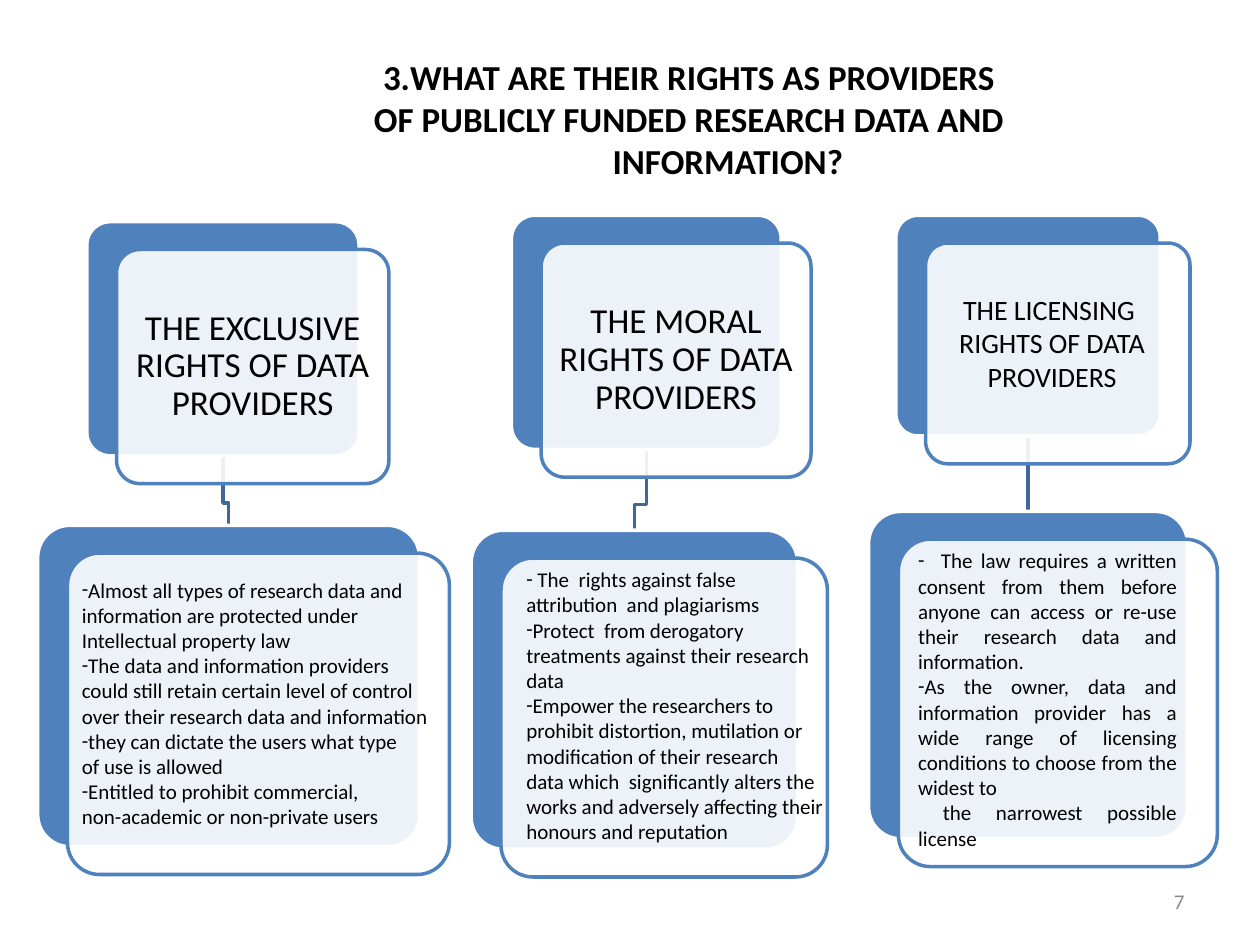
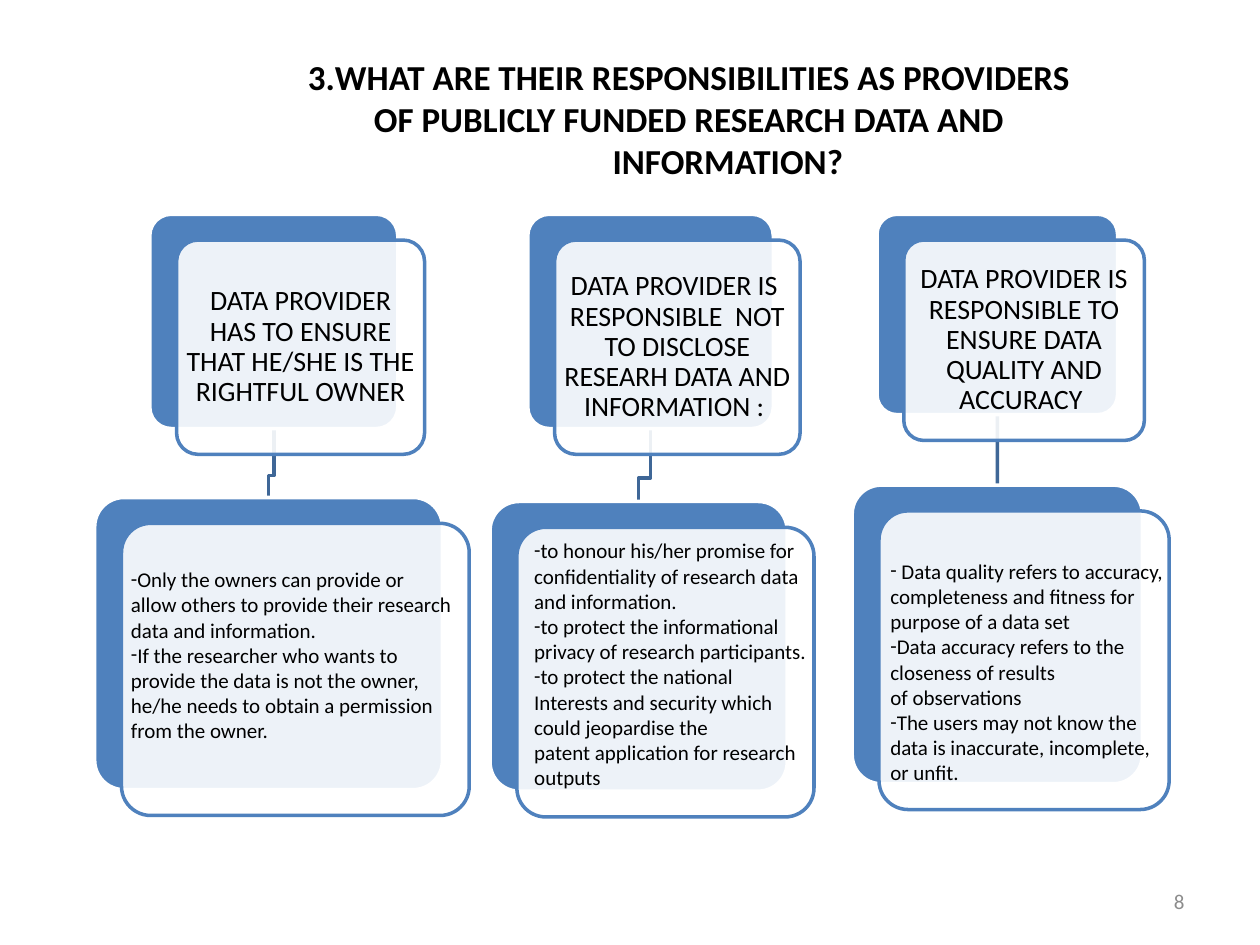
from dataclasses import dataclass

from lxml import etree
from pptx import Presentation
from pptx.dml.color import RGBColor
from pptx.enum.shapes import MSO_CONNECTOR, MSO_SHAPE
from pptx.enum.text import MSO_ANCHOR, MSO_AUTO_SIZE, PP_ALIGN
from pptx.oxml.ns import qn
from pptx.util import Cm, Pt

STRAIGHT = MSO_CONNECTOR.STRAIGHT
ROUNDED = MSO_SHAPE.ROUNDED_RECTANGLE
TOP, MIDDLE = MSO_ANCHOR.TOP, MSO_ANCHOR.MIDDLE
FIXED, GROW = MSO_AUTO_SIZE.NONE, MSO_AUTO_SIZE.SHAPE_TO_FIT_TEXT
CENTER, RIGHT, JUSTIFY = PP_ALIGN.CENTER, PP_ALIGN.RIGHT, PP_ALIGN.JUSTIFY

FONT = "Calibri"
BLUE, LINK, WHITE, BLACK, GREY = "4F81BD", "3F6797", "FFFFFF", "000000", "8C8C8C"
LINE_WIDTH = Pt(2)
BEND = 0.68
TITLE_END = ("OF PUBLICLY FUNDED RESEARCH DATA AND ", "INFORMATION?")


@dataclass(frozen=True)
class Box:
    x: float
    y: float
    w: float
    h: float

    @property
    def place(self) -> tuple:
        return Cm(self.x), Cm(self.y), Cm(self.w), Cm(self.h)

    @property
    def center_x(self) -> float:
        return self.x + self.w / 2

    def shifted(self, dx: float, dy: float) -> "Box":
        return Box(self.x + dx, self.y + dy, self.w, self.h)


@dataclass(frozen=True)
class Note:
    box: Box
    lines: tuple
    size: int = 12
    align: PP_ALIGN = JUSTIFY
    wrap: bool = False


@dataclass(frozen=True)
class Column:
    head: Box
    body: Box
    heading: str
    notes: tuple


@dataclass(frozen=True)
class Page:
    number: str
    title: str
    heading_size: int
    offset: tuple
    columns: tuple


PAGES = (
    Page("7", "WHAT ARE THEIR RIGHTS AS PROVIDERS ", 20, (0.6, 0.56), (
        Column(Box(1.75, 4.47, 5.49, 4.72), Box(0.76, 10.59, 7.7, 6.48),
               "THE EXCLUSIVE RIGHTS OF DATA PROVIDERS", (
            Note(Box(1.4, 11.51, 7.67, 5.38), (
                "-Almost all types of research data and ",
                "information are protected under ",
                "Intellectual property law",
                "-The data and information providers",
                "could still retain certain level of control",
                "over their research data and information",
                "-they can dictate the users what type ",
                "of use is allowed",
                "-Entitled to prohibit commercial, ",
                "non-academic or non-private users ")),)),
        Column(Box(10.31, 4.34, 5.44, 4.72), Box(9.5, 10.69, 6.58, 6.43),
               "THE MORAL RIGHTS OF DATA PROVIDERS", (
            Note(Box(10.36, 11.3, 6.55, 6.93), (
                "- The  rights against false ",
                "attribution  and plagiarisms",
                "-Protect  from derogatory ",
                "treatments against their research ",
                "data",
                "-Empower the researchers to",
                "prohibit distortion, mutilation or ",
                "modification of their research ",
                "data which  significantly alters the ",
                "works and adversely affecting their",
                "honours and reputation")),)),
        Column(Box(18.06, 4.34, 5.33, 4.45), Box(17.51, 10.31, 6.43, 6.6), "", (
            Note(Box(19.05, 5.77, 4.32, 2.31),
                 ("THE LICENSING ", "RIGHTS OF DATA", "PROVIDERS"), 16, CENTER),
            Note(Box(18.26, 10.92, 5.72, 6.93), (
                "-  The law requires a written consent from them before anyone "
                "can access or re-use their research data and information.",
                "-As the owner, data and information provider has a wide range "
                "of licensing conditions to choose from the widest to",
                " the narrowest possible license"), wrap=True))),
    )),
    Page("8", "WHAT ARE THEIR RESPONSIBILITIES AS PROVIDERS ", 16, (0.54, 0.52), (
        Column(Box(3.02, 4.32, 5, 4.32), Box(1.91, 10.03, 7.01, 5.89),
               "DATA PROVIDER HAS TO ENSURE THAT HE/SHE IS THE RIGHTFUL OWNER", (
            Note(Box(2.39, 11.3, 7.04, 3.84), (
                "-Only the owners can provide or ",
                "allow others to provide their research",
                "data and information.",
                "-If the researcher who wants to ",
                "provide the data is not the owner, ",
                "he/he needs to obtain a permission ",
                "from the owner.")),)),
        Column(Box(10.64, 4.32, 4.95, 4.32), Box(9.88, 10.11, 5.99, 5.84),
               "DATA PROVIDER IS  RESPONSIBLE  NOT TO DISCLOSE "
               "RESEARH DATA AND INFORMATION : ", (
            Note(Box(10.52, 10.72, 6.05, 5.89), (
                "-to honour his/her promise for ",
                "confidentiality of research data ",
                "and information.",
                "-to protect the informational ",
                "privacy of research participants.",
                "-to protect the national ",
                "Interests and security which ",
                "could jeopardise the ",
                "patent application for research ",
                "outputs")),)),
        Column(Box(17.68, 4.32, 4.85, 4.04), Box(17.18, 9.78, 5.85, 6.02),
               "DATA PROVIDER IS RESPONSIBLE TO ENSURE DATA QUALITY AND ACCURACY ", (
            Note(Box(17.7, 11.13, 6.07, 4.88), (
                "- Data quality refers to accuracy,",
                "completeness and fitness for ",
                "purpose of a data set",
                "-Data accuracy refers to the ",
                "closeness of results ",
                "of observations ",
                "-The users may not know the ",
                "data is inaccurate, incomplete,",
                "or unfit. ")),)),
    )),
)


def rgb(value: str) -> RGBColor:
    return RGBColor.from_string(value)


def add_line(tf, index: int, text: str, size: int, align, color=BLACK, bold=False):
    p = tf.paragraphs[0] if index == 0 else tf.add_paragraph()
    p.alignment = align
    r = p.add_run()
    r.text = text
    r.font.name, r.font.size, r.font.bold = FONT, Pt(size), bold
    r.font.color.rgb = rgb(color)
    return p


def add_bullet(p, tag: str, **attributes: str) -> None:
    pPr = p._p.get_or_add_pPr()
    pPr.set("marL", "0")
    pPr.set("indent", "0")
    etree.SubElement(pPr, qn("a:buFont")).set("typeface", FONT)
    etree.SubElement(pPr, qn(tag), attributes)


def add_title(s, first_line: str) -> None:
    title = s.shapes.title
    title.left, title.top, title.width, title.height = Box(2.54, 0.99, 22.86, 3.18).place
    tf = title.text_frame
    tf.auto_size, tf.vertical_anchor = FIXED, TOP
    lines = [add_line(tf, i, text, 20, CENTER, bold=True)
             for i, text in enumerate((first_line, *TITLE_END))]
    add_bullet(lines[0], "a:buAutoNum", type="arabicPeriod", startAt="3")
    lines[-1]._p.get_or_add_pPr().set("marL", str(Cm(1.41)))


def add_number(s, number: str) -> None:
    tf = s.shapes.add_textbox(*Box(18.21, 17.65, 5.92, 1.02).place).text_frame
    tf.word_wrap, tf.vertical_anchor = True, MIDDLE
    add_line(tf, 0, number, 12, RIGHT, GREY)


def add_link(s, head: Box, body: Box):
    start, end = head.y + head.h, body.y
    x1, x2 = head.center_x, body.center_x
    straight = abs(x1 - x2) < 0.05
    if straight:
        link = s.shapes.add_connector(STRAIGHT, Cm(x1), Cm(start), Cm(x2), Cm(end))
        etree.SubElement(link._element.spPr, qn("a:effectLst"))
    else:
        bend = start + (end - start) * BEND
        outline = s.shapes.build_freeform(Cm(x1), Cm(start))
        outline.add_line_segments(
            [(Cm(x), Cm(y)) for x, y in ((x1, bend), (x2, bend), (x2, end))], close=False)
        link = outline.convert_to_shape()
        link.fill.background()
        link.shadow.inherit = False
    link.line.color.rgb, link.line.width = rgb(LINK), LINE_WIDTH
    return link if straight else None


def add_panel(s, box: Box, fill: str, line: str):
    sp = s.shapes.add_shape(ROUNDED, *box.place)
    sp.adjustments[0] = 0.1
    sp.shadow.inherit = False
    sp.fill.solid()
    sp.fill.fore_color.rgb = rgb(fill)
    sp.line.color.rgb, sp.line.width = rgb(line), LINE_WIDTH
    return sp


def add_card(s, box: Box, offset: tuple, heading="", size=20):
    back = add_panel(s, box, BLUE, WHITE)
    front = add_panel(s, box.shifted(*offset), WHITE, BLUE)
    color = front._element.spPr.find(qn("a:solidFill"))[0]
    etree.SubElement(color, qn("a:alpha")).set("val", "90000")
    if heading:
        tf = front.text_frame
        tf.word_wrap, tf.vertical_anchor = True, MIDDLE
        tf.margin_left = tf.margin_right = tf.margin_top = tf.margin_bottom = Cm(0.02)
        add_line(tf, 0, heading, size, CENTER).line_spacing = 0.9
    return back


def add_note(s, note: Note) -> None:
    tf = s.shapes.add_textbox(*note.box.place).text_frame
    tf.word_wrap, tf.auto_size = note.wrap, GROW
    for i, line in enumerate(note.lines):
        p = add_line(tf, i, line.removeprefix("-"), note.size, note.align)
        if line.startswith("-"):
            add_bullet(p, "a:buChar", char="-")


def add_page(prs, page: Page) -> None:
    s = prs.slides.add_slide(prs.slide_layouts.get_by_name("Title Only"))
    add_title(s, page.title)
    add_number(s, page.number)
    links = [add_link(s, c.head, c.body) for c in page.columns]
    for column, link in zip(page.columns, links):
        head = add_card(s, column.head, page.offset, column.heading, page.heading_size)
        body = add_card(s, column.body, page.offset)
        if link is not None:
            link.begin_connect(head, 2)
            link.end_connect(body, 0)
    for column in page.columns:
        for note in column.notes:
            add_note(s, note)


def main() -> None:
    prs = Presentation()
    prs.slide_width, prs.slide_height = Cm(25.4), Cm(19.05)
    for page in PAGES:
        add_page(prs, page)
    prs.save("out.pptx")


if __name__ == "__main__":
    main()
